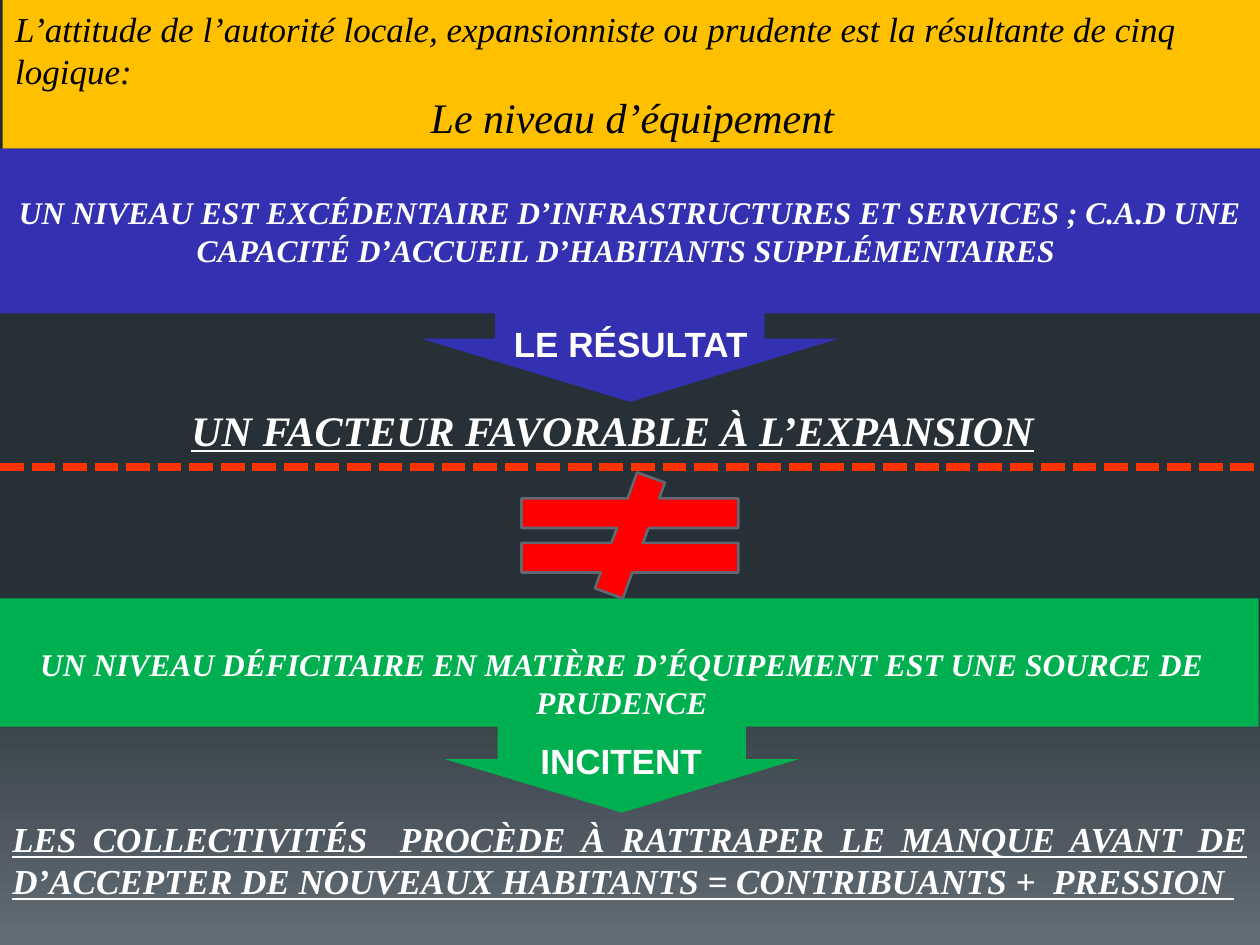
import copy

import lxml.etree
import pptx
import pptx.dml.color
import pptx.enum.dml
import pptx.enum.shapes
import pptx.enum.text
import pptx.oxml.ns
import pptx.util

THEME = {
    "serif": "Times New Roman", "sans": "Arial",
    "heading": 24, "body": 20, "callout": 18,
    "white": "FFFFFF", "black": "000000", "title": "FFC000",
    "surplus": "3330B1", "deficit": "00B050",
    "sign": "FF0000", "sign_edge": "616873", "divider": "FF3300",
    "background": [(0, "242C33"), (0.65, "273037"), (1, "636D76")],
}
ALIGN = pptx.enum.text.PP_ALIGN
ANCHOR = pptx.enum.text.MSO_ANCHOR
SHAPE = pptx.enum.shapes.MSO_SHAPE
inches = pptx.util.Inches
color = pptx.dml.color.RGBColor.from_string
qn = pptx.oxml.ns.qn


def write(shape, *lines, font="serif", size="body", ink="white", bold=True, italic=True,
          underline=False, align=ALIGN.LEFT, anchor=ANCHOR.TOP, wrap=True):
    """Fill a shape with one paragraph per line, all in the same format."""
    frame = shape.text_frame
    frame.text = "\n".join(lines)
    frame.word_wrap = wrap
    frame.vertical_anchor = anchor
    frame.auto_size = pptx.enum.text.MSO_AUTO_SIZE.NONE
    for paragraph in frame.paragraphs:
        paragraph.alignment = align
        for run in paragraph.runs:
            run.font.name = THEME[font]
            run.font.size = pptx.util.Pt(THEME[size])
            run.font.bold, run.font.italic, run.font.underline = bold, italic, underline
            run.font.color.rgb = color(THEME[ink])
    return frame


presentation = pptx.Presentation()
presentation.slide_width, presentation.slide_height = inches(10), inches(7.5)
width = presentation.slide_width
slide = presentation.slides.add_slide(presentation.slide_layouts[5])
shapes = slide.shapes

# Background gradient, dark at the top
background = slide.background.fill
background.gradient()
background.gradient_angle = 270
stop_list = slide.element.find(".//" + qn("a:gsLst"))
stop_list.append(copy.deepcopy(stop_list[-1]))
for stop, (position, shade) in zip(background.gradient_stops, THEME["background"]):
    stop.position = position
    stop.color.rgb = color(shade)

# Title band
title = shapes.title
title.left, title.top, title.width, title.height = inches(0.02), 0, width, inches(1.18)
title.fill.solid()
title.fill.fore_color.rgb = color(THEME["title"])
title_frame = write(
    title,
    "L’attitude de l’autorité locale, expansionniste ou prudente est la résultante de cinq logique:",
    "Le niveau d’équipement",
    ink="black", bold=False, anchor=ANCHOR.MIDDLE)
subject = title_frame.paragraphs[1]
subject.alignment = ALIGN.CENTER
subject.runs[0].font.size = pptx.util.Pt(THEME["heading"])

# Arrow callouts: left, top, width, height, adjustments, fill, anchor, text
callouts = [
    (0, 1.18, 10, 2.01, (1.064, 0.826, 0.25, 0.65), "surplus", ANCHOR.MIDDLE,
     "UN NIVEAU EST EXCÉDENTAIRE D’INFRASTRUCTURES ET SERVICES ; C.A.D UNE "
     "CAPACITÉ D’ACCUEIL D’HABITANTS SUPPLÉMENTAIRES "),
    (-0.12, 4.75, 10.11, 1.7, (1.16, 0.827, 0.25, 0.599), "deficit", ANCHOR.BOTTOM,
     "UN NIVEAU DÉFICITAIRE EN MATIÈRE D’ÉQUIPEMENT EST UNE SOURCE DE PRUDENCE"),
]
for *box, adjustments, fill, anchor, text in callouts:
    callout = shapes.add_shape(SHAPE.DOWN_ARROW_CALLOUT, *map(inches, box))
    callout.shadow.inherit = False
    callout.fill.solid()
    callout.fill.fore_color.rgb = color(THEME[fill])
    callout.line.fill.background()
    for index, value in enumerate(adjustments):
        callout.adjustments[index] = value
    write(callout, text, size="callout", align=ALIGN.CENTER, anchor=anchor)

# Arrow labels and conclusions
label = {"font": "sans", "italic": False, "wrap": False}
conclusion = {"underline": True}
texts = [
    (3.98, 2.51, 2.08, 0.44, "LE RÉSULTAT", label),
    (1.42, 3.16, 7.19, 0.74, "UN FACTEUR FAVORABLE À L’EXPANSION",
     {**conclusion, "size": "heading", "wrap": False}),
    (4.19, 5.82, 1.5, 0.44, "INCITENT", label),
    (0, 6.44, 10, 1.11,
     "LES COLLECTIVITÉS  PROCÈDE À RATTRAPER LE MANQUE AVANT DE "
     "D’ACCEPTER DE NOUVEAUX HABITANTS = CONTRIBUANTS +  PRESSION ",
     {**conclusion, "align": ALIGN.JUSTIFY}),
]
for *box, text, text_format in texts:
    write(shapes.add_textbox(*map(inches, box)), text, **text_format)

# Divider and inequality sign between the two cases
divider = shapes.add_connector(pptx.enum.shapes.MSO_CONNECTOR.STRAIGHT,
                               0, inches(3.71), width, inches(3.71))
divider.line.color.rgb = color(THEME["divider"])
divider.line.width = pptx.util.Pt(4.5)
divider.line.dash_style = pptx.enum.dml.MSO_LINE.SQUARE_DOT
lxml.etree.SubElement(divider.element.spPr, qn("a:effectLst"))

sign = shapes.add_shape(SHAPE.MATH_NOT_EQUAL, *map(inches, (3.83, 3.75, 2.34, 1)))
sign.shadow.inherit = False
sign.fill.solid()
sign.fill.fore_color.rgb = color(THEME["sign"])
sign.line.color.rgb = color(THEME["sign_edge"])
sign.line.width = pptx.util.Pt(1.5)

presentation.save("out.pptx")
